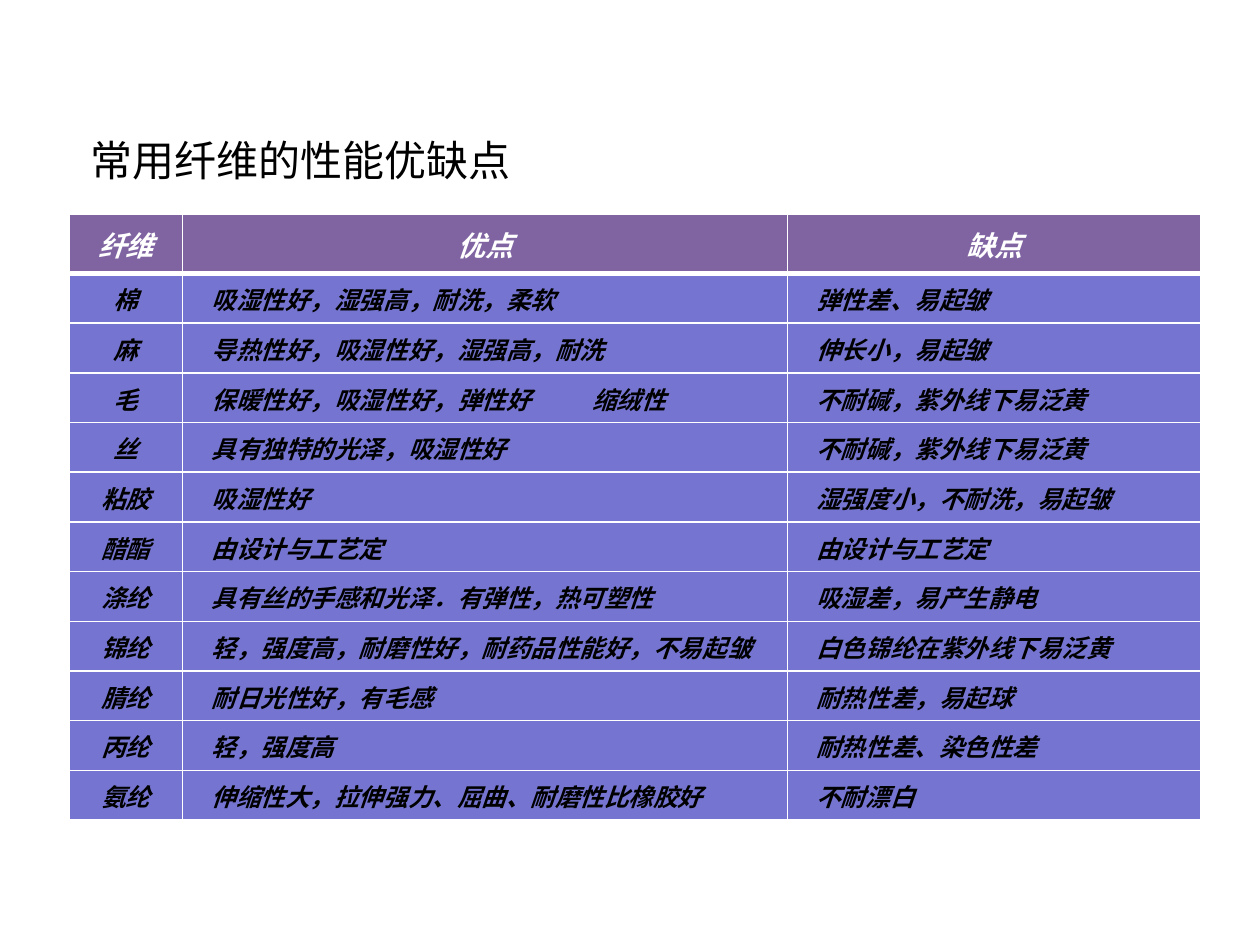
"""Build a slide with a table of the strengths and weaknesses of common fibres."""
from lxml import etree
from pptx import Presentation
from pptx.dml.color import RGBColor
from pptx.enum.text import MSO_ANCHOR, MSO_AUTO_SIZE, PP_ALIGN
from pptx.oxml import parse_xml
from pptx.oxml.ns import nsdecls, qn
from pptx.util import Inches, Pt

TITLE = "常用纤维的性能优缺点"
ROWS = [
    ("纤维", "优点", "缺点"),
    ("棉", "吸湿性好，湿强高，耐洗，柔软", "弹性差、易起皱"),
    ("麻", "导热性好，吸湿性好，湿强高，耐洗", "伸长小，易起皱"),
    ("毛", "保暖性好，吸湿性好，弹性好\t缩绒性", "不耐碱，紫外线下易泛黄"),
    ("丝", "具有独特的光泽，吸湿性好", "不耐碱，紫外线下易泛黄"),
    ("粘胶", "吸湿性好", "湿强度小，不耐洗，易起皱"),
    ("醋酯", "由设计与工艺定", "由设计与工艺定"),
    ("涤纶", "具有丝的手感和光泽．有弹性，热可塑性", "吸湿差，易产生静电"),
    ("锦纶", "轻，强度高，耐磨性好，耐药品性能好，不易起皱", "白色锦纶在紫外线下易泛黄"),
    ("腈纶", "耐日光性好，有毛感", "耐热性差，易起球"),
    ("丙纶", "轻，强度高", "耐热性差、染色性差"),
    ("氨纶", "伸缩性大，拉伸强力、屈曲、耐磨性比橡胶好", "不耐漂白"),
]
COLS = (0.9, 4.8, 3.28)
HEAD_H, TOTAL_H = 0.47, 4.81
PAD, INDENT, TAB = 0.01, 0.23, 3.02

WHITE = RGBColor(0xFF, 0xFF, 0xFF)
BLACK = RGBColor(0, 0, 0)
PURPLE = RGBColor(0x80, 0x64, 0xA2)
BLUE = RGBColor(0x75, 0x75, 0xD1)
LEFT, CENTER = PP_ALIGN.LEFT, PP_ALIGN.CENTER
TOP, MIDDLE = MSO_ANCHOR.TOP, MSO_ANCHOR.MIDDLE
FIXED = MSO_AUTO_SIZE.NONE
FACE = "Noto Sans CJK SC"
HEAD = {"size": Pt(16), "bold": True, "italic": True, "name": FACE}
BODY = {**HEAD, "size": Pt(14)}


def apply(item, values):
    for key, value in values.items():
        setattr(item, key, value)


def write(par, text, look, color, face):
    run = par.add_run()
    run.text = text
    apply(run.font, look)
    run.font.color.rgb = color
    east = etree.SubElement(run.font._element, qn("a:ea"))
    east.set("typeface", face)


def add_tab(par, place):
    tabs = etree.SubElement(par._p.get_or_add_pPr(), qn("a:tabLst"))
    etree.SubElement(tabs, qn("a:tab"), pos=str(Inches(place)), algn="l")


def add_lines(cell, row):
    widths = {"L": 1, "R": 1, "T": 3 if row == 1 else 1, "B": 3 if row == 0 else 1}
    props = cell._tc.get_or_add_tcPr()
    for spot, (side, width) in enumerate(widths.items()):
        props.insert(spot, parse_xml(
            f'<a:ln{side} {nsdecls("a")} w="{Pt(width)}"><a:solidFill>'
            f'<a:srgbClr val="{WHITE}"/></a:solidFill></a:ln{side}>'))


def fill_cell(cell, text, row, col):
    head = row == 0
    mid = head or col == 0
    apply(cell, {
        "vertical_anchor": MIDDLE, "margin_top": Inches(PAD), "margin_bottom": 0,
        "margin_left": Inches(PAD if mid else INDENT), "margin_right": Inches(PAD),
    })
    cell.fill.solid()
    cell.fill.fore_color.rgb = PURPLE if head else BLUE
    add_lines(cell, row)
    par = cell.text_frame.paragraphs[0]
    par.alignment = CENTER if mid else LEFT
    if "\t" in text:
        add_tab(par, TAB)
    write(par, text, HEAD if head else BODY, WHITE if head else BLACK, FACE)


def add_title(slide):
    title = slide.shapes.title
    apply(title, {"left": Inches(0.62), "top": Inches(1.02),
                  "width": Inches(3.6), "height": Inches(0.5)})
    apply(title.text_frame, {
        "word_wrap": True, "auto_size": FIXED, "vertical_anchor": TOP,
        "margin_left": Inches(0.1), "margin_right": 0})
    par = title.text_frame.paragraphs[0]
    par.alignment = LEFT
    write(par, TITLE, {"size": Pt(24), "name": "Arial"}, BLACK, FACE)


def add_grid(slide):
    table = slide.shapes.add_table(
        len(ROWS), len(COLS), Inches(0.55), Inches(1.7),
        Inches(sum(COLS)), Inches(TOTAL_H)).table
    for col, width in zip(table.columns, COLS):
        col.width = Inches(width)
    body_h = (TOTAL_H - HEAD_H) / (len(ROWS) - 1)
    for row, texts in enumerate(ROWS):
        table.rows[row].height = Inches(body_h if row else HEAD_H)
        for col, text in enumerate(texts):
            fill_cell(table.cell(row, col), text, row, col)


def main():
    deck = Presentation()
    apply(deck, {"slide_width": Inches(10), "slide_height": Inches(7.5)})
    slide = deck.slides.add_slide(deck.slide_layouts[5])
    add_title(slide)
    add_grid(slide)
    deck.save("out.pptx")


if __name__ == "__main__":
    main()
